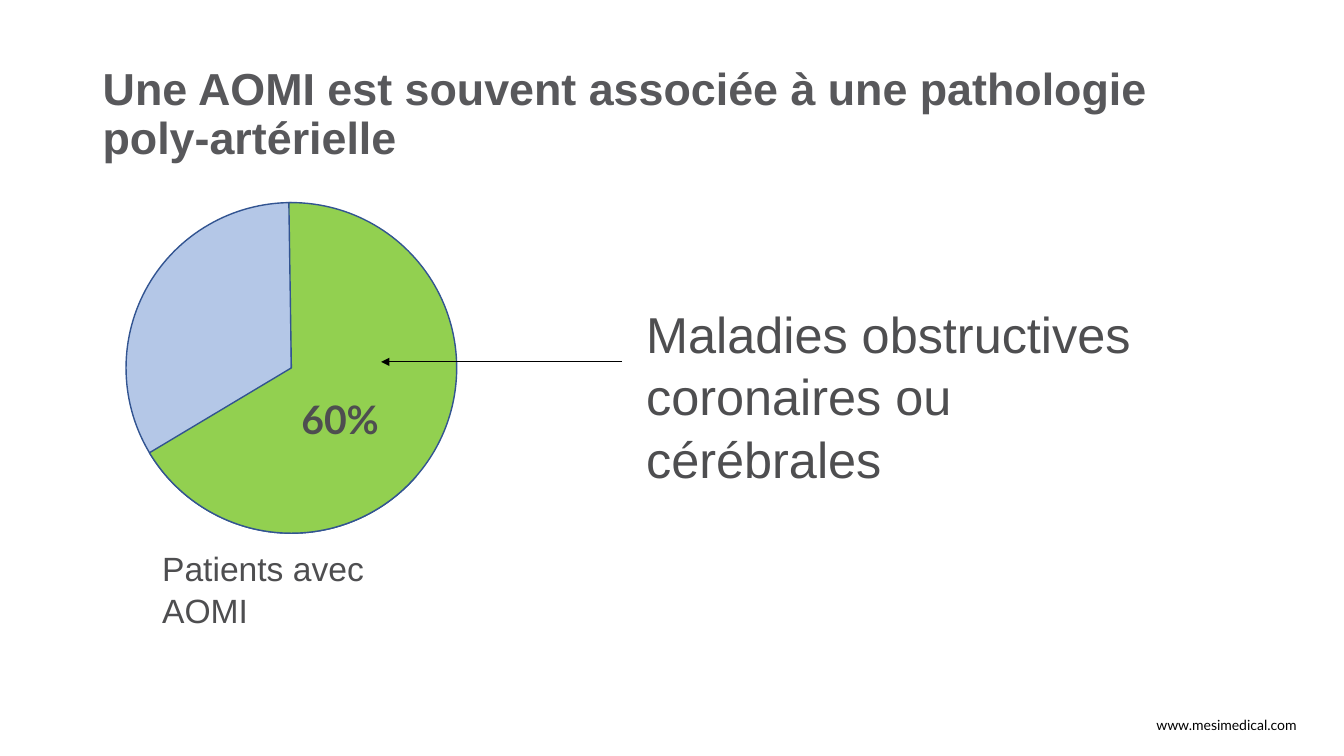
from dataclasses import dataclass

from lxml.etree import SubElement
from pptx import Presentation
from pptx.dml.color import RGBColor
from pptx.enum.shapes import MSO_CONNECTOR as Connector, MSO_SHAPE as Preset
from pptx.enum.text import MSO_ANCHOR as Anchor
from pptx.oxml.ns import qn
from pptx.slide import Slide
from pptx.util import Inches, Pt

GREY = "4E4E50"
PIE_BOX = (1.25, 2.01, 3.28, 3.28)
ADJUSTMENT_PER_DEGREE = 0.6


@dataclass
class Wedge:
    start: float  # degrees clockwise from the right
    end: float
    fill: str


@dataclass
class Label:
    lines: list[str]
    box: tuple[float, float, float, float]
    size: float
    font: str = "Arial"
    color: str = GREY
    bold: bool = False
    spacing: float = 1.0
    anchor: Anchor = Anchor.TOP


WEDGES = [
    Wedge(41.13, 270, "B4C7E7"),
    Wedge(269.14, 149.1, "92D050"),
]

LABELS = [
    Label(["Une AOMI est souvent associée à une pathologie poly-artérielle"],
          (0.92, 0.42, 11.63, 1.45), 32, color="58585B", bold=True,
          spacing=0.9, anchor=Anchor.MIDDLE),
    Label(["60%"], (2.89, 3.87, 1.78, 0.57), 28, font="Lato", bold=True),
    Label(["Patients avec AOMI"], (1.51, 5.37, 3.02, 0.5), 24, spacing=1.04),
    Label(["Maladies obstructives", "coronaires ou cérébrales"],
          (6.31, 2.93, 5.65, 1.31), 36, spacing=1.04),
    Label(["www.mesimedical.com"], (11.37, 7.06, 1.81, 0.27), 10,
          font="Lato", color="000000"),
]


def rgb(value: str) -> RGBColor:
    return RGBColor.from_string(value)


def draw_wedge(page: Slide, wedge: Wedge) -> None:
    shape = page.shapes.add_shape(Preset.PIE, *map(Inches, PIE_BOX))
    for index, angle in enumerate((wedge.start, wedge.end)):
        shape.adjustments[index] = angle * ADJUSTMENT_PER_DEGREE
    shape.shadow.inherit = False
    shape.fill.solid()
    shape.fill.fore_color.rgb = rgb(wedge.fill)
    shape.line.color.rgb = rgb("325491")
    shape.line.width = Pt(1)


def draw_label(page: Slide, label: Label) -> None:
    frame = page.shapes.add_textbox(*map(Inches, label.box)).text_frame
    frame.word_wrap = True
    frame.vertical_anchor = label.anchor
    formats = {"name": label.font, "size": Pt(label.size), "bold": label.bold}
    for index, line in enumerate(label.lines):
        para = frame.add_paragraph() if index else frame.paragraphs[0]
        para.line_spacing = label.spacing
        span = para.add_run()
        span.text = line
        for name, value in formats.items():
            setattr(span.font, name, value)
        span.font.color.rgb = rgb(label.color)


def draw_arrow(page: Slide, start: float, end: float, height: float) -> None:
    arrow = page.shapes.add_connector(
        Connector.STRAIGHT, *map(Inches, (start, height, end, height)))
    arrow.line.color.rgb = rgb("000000")
    arrow.line.width = Pt(0.5)
    SubElement(arrow.line._get_or_add_ln(), qn("a:tailEnd"), type="triangle")
    SubElement(arrow._element.spPr, qn("a:effectLst"))


def main() -> None:
    deck = Presentation()
    deck.slide_width, deck.slide_height = Inches(13.33), Inches(7.5)
    page = deck.slides.add_slide(deck.slide_layouts[6])

    # Pie of patients
    for wedge in WEDGES:
        draw_wedge(page, wedge)

    # Pointer from the explanation to the green share
    draw_arrow(page, 6.17, 3.78, 3.59)

    # Title, captions and web address
    for label in LABELS:
        draw_label(page, label)

    deck.save("out.pptx")


if __name__ == "__main__":
    main()
